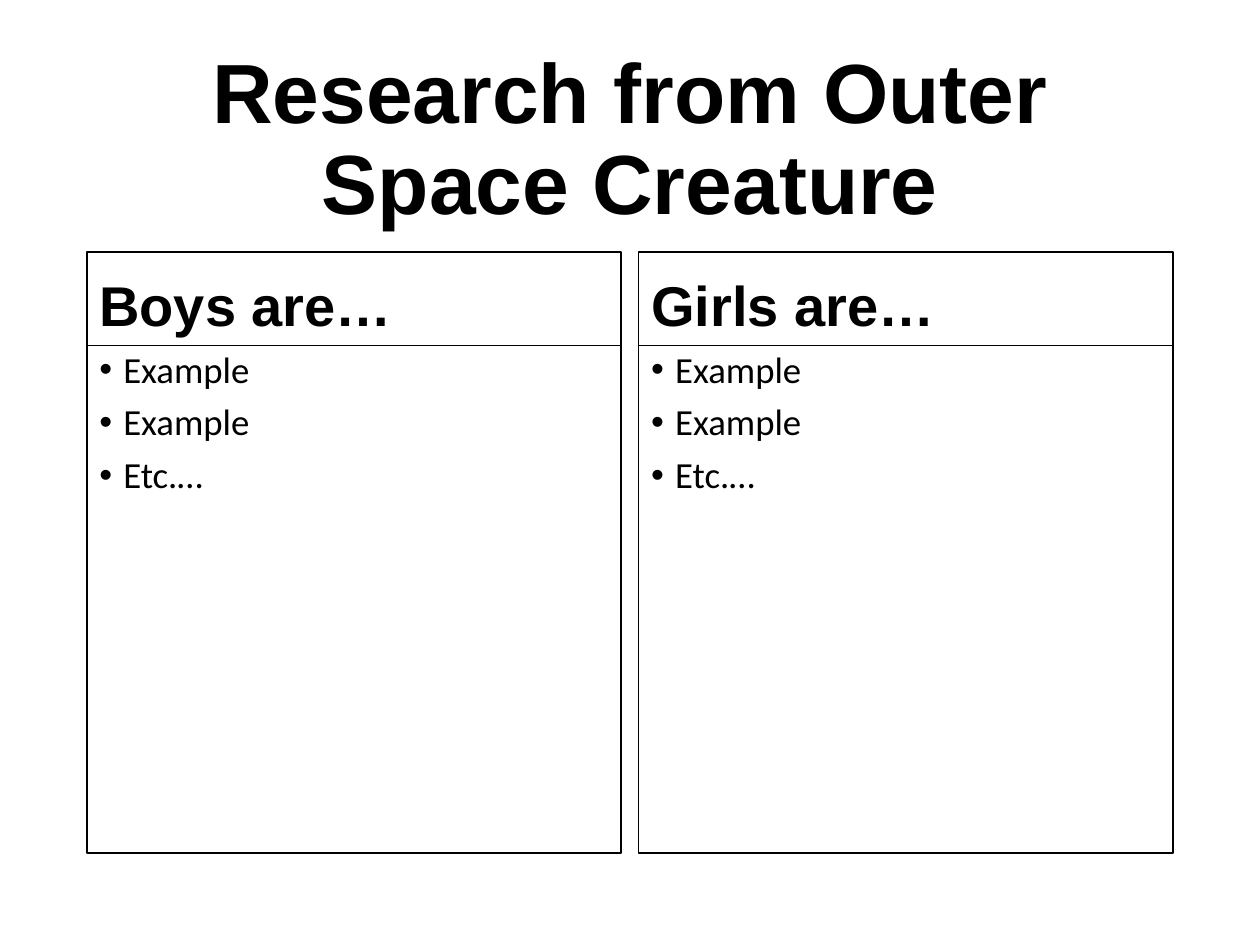
from lxml import etree
from pptx import Presentation
from pptx import util as u
from pptx.dml.color import RGBColor
from pptx.enum import text
from pptx.oxml.ns import qn

TITLE = "Research from Outer Space Creature"
COLUMNS = [
    ("Boys are…", ["Example", "Example", "Etc.…"]),
    ("Girls are…", ["Example", "Example", "Etc.…"]),
]
BLACK = "000000"
WIDTH, HEIGHT = 10, 7.5
MARGIN, GUTTER = 0.69, 0.14
HEAD_TOP, HEAD_HEIGHT, LIST_HEIGHT = 2, 0.74, 4.03
INDENT = 0.19
COLUMN_WIDTH = (WIDTH - 2 * MARGIN - GUTTER) / 2


def color(value):
    return RGBColor.from_string(value)


def place(sp, left, top, width, height):
    sp.left, sp.top = u.Inches(left), u.Inches(top)
    sp.width, sp.height = u.Inches(width), u.Inches(height)


def write(sp, lines, font, size, bold, anchor, align, before=0):
    tf = sp.text_frame
    tf.word_wrap = True
    tf.auto_size = text.MSO_AUTO_SIZE.NONE
    tf.vertical_anchor = anchor
    tf.text = "\n".join(lines)
    for p in tf.paragraphs:
        p.alignment = align
        p.line_spacing = 0.9
        p.space_before = u.Pt(before)
        for r in p.runs:
            r.font.name, r.font.size, r.font.bold = font, u.Pt(size), bold
            r.font.color.rgb = color(BLACK)


def add_box(slide, left, top, height, lines, font, size, bold, anchor):
    sp = slide.shapes.add_textbox(0, 0, 0, 0)
    place(sp, left, top, COLUMN_WIDTH, height)
    sp.line.color.rgb = color(BLACK)
    sp.line.width = u.Pt(0.75)
    write(sp, lines, font, size, bold, anchor, text.PP_ALIGN.LEFT, 7.5)
    return sp


def add_bullets(sp):
    for p in sp.text_frame.paragraphs:
        pPr = p._p.get_or_add_pPr()
        pPr.set("marL", str(u.Inches(INDENT)))
        pPr.set("indent", str(-u.Inches(INDENT)))
        etree.SubElement(pPr, qn("a:buFont"), typeface="Arial")
        etree.SubElement(pPr, qn("a:buChar"), char="•")


def main():
    prs = Presentation()
    prs.slide_width, prs.slide_height = u.Inches(WIDTH), u.Inches(HEIGHT)
    slide = prs.slides.add_slide(prs.slide_layouts[5])
    title = slide.shapes.title
    place(title, MARGIN, 0.4, WIDTH - 2 * MARGIN, 1.45)
    write(title, [TITLE], "Arial", 48, True,
          text.MSO_ANCHOR.MIDDLE, text.PP_ALIGN.CENTER)

    for i, (heading, items) in enumerate(COLUMNS):
        left = MARGIN + i * (COLUMN_WIDTH + GUTTER)
        add_box(slide, left, HEAD_TOP, HEAD_HEIGHT, [heading],
                "Arial", 32, True, text.MSO_ANCHOR.BOTTOM)
        body = add_box(slide, left, HEAD_TOP + HEAD_HEIGHT, LIST_HEIGHT, items,
                       "Calibri", 21, False, text.MSO_ANCHOR.TOP)
        add_bullets(body)
    prs.save("out.pptx")


if __name__ == "__main__":
    main()
